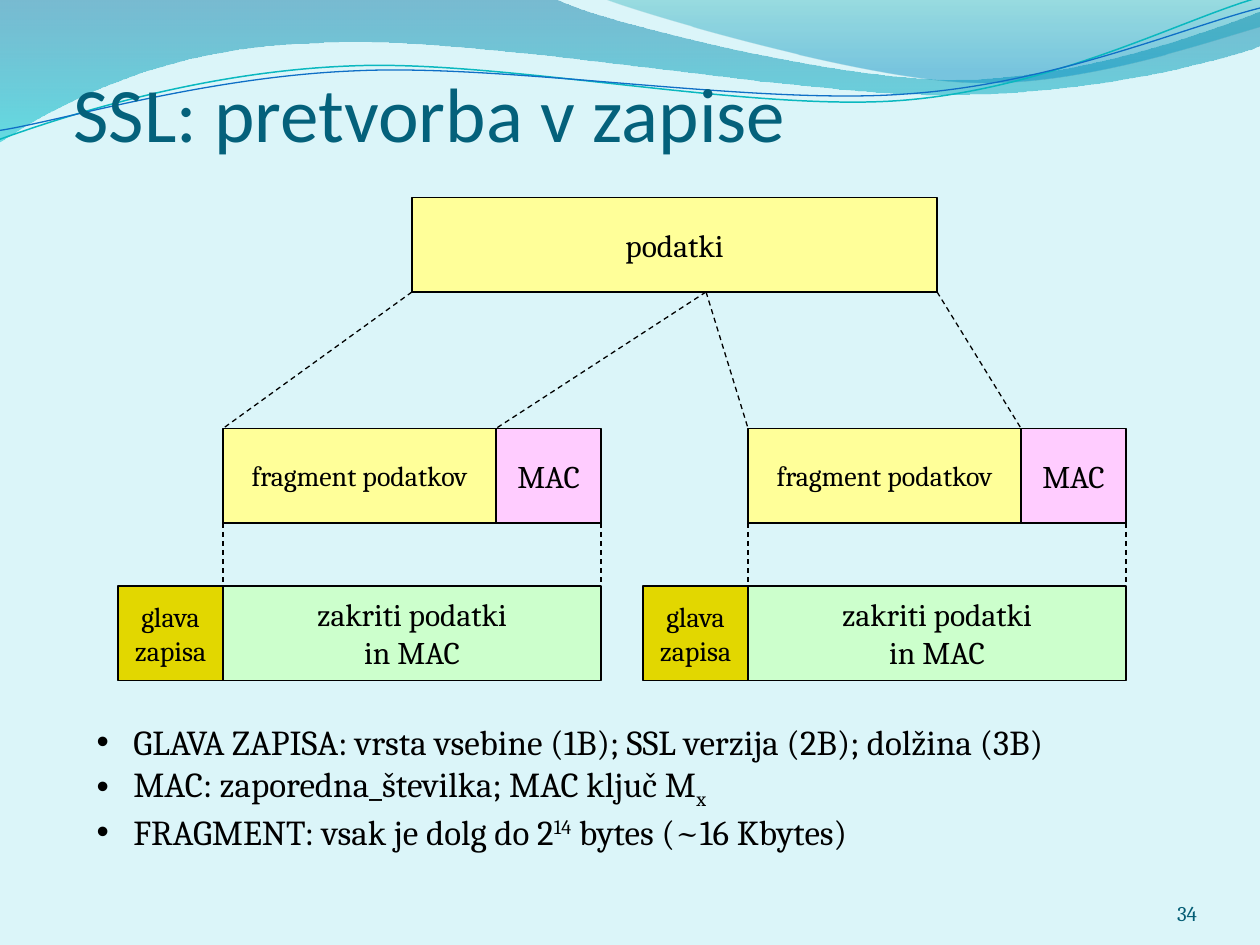
from lxml.etree import SubElement
from pptx import Presentation
from pptx.dml.color import RGBColor
from pptx.enum.dml import MSO_LINE
from pptx.enum.shapes import MSO_CONNECTOR as Link, MSO_SHAPE as Kind
from pptx.enum.text import MSO_ANCHOR as Anchor, MSO_AUTO_SIZE as Fit, PP_ALIGN as Align
from pptx.oxml.ns import qn
from pptx.util import Cm, Pt

BLACK = RGBColor(0x00, 0x00, 0x00)
SKY = RGBColor(0xDB, 0xF5, 0xF9)
TITLE = RGBColor(0x04, 0x61, 0x7B)
NUMBER = RGBColor(0x04, 0x5D, 0x75)
YELLOW = RGBColor(0xFF, 0xFF, 0x99)
PINK = RGBColor(0xFF, 0xCC, 0xFF)
GREEN = RGBColor(0xCC, 0xFF, 0xCC)
GOLD = RGBColor(0xE2, 0xD7, 0x00)
BLUE = RGBColor(0x0F, 0x6F, 0xC6)
TEAL = RGBColor(0x0A, 0xB8, 0xBF)
DEEP = RGBColor(0x00, 0x74, 0xA1)
AQUA = RGBColor(0x00, 0xC6, 0xCF)
JADE = RGBColor(0x00, 0xA1, 0xA9)
OCEAN = RGBColor(0x00, 0x8B, 0xBF)

WIDE, HIGH = 25.4, 19.05
# The diagram sits on a grid of twelfths of an inch
GRID = 2.54 / 12
ROW, CELL, PART = 9 * GRID, 10 * GRID, 26 * GRID  # row height, small cell, fragment
BODY = PART + CELL
STEP = 50 * GRID                                  # from one record to the next

# Waves in tenths of the band width: a start, then lines (2) and curves (6)
FILLS = [
    ([(0, 0), (4.4, -0.01), (4.76, 0.17, 6.64, 0.63, 7.58, 0.63),
      (8.53, 0.63, 9.58, 0.26, 10, 0.09), (10.01, 0.36),
      (9.83, 0.44, 8.7, 0.76, 7.46, 0.75), (6.22, 0.75, 3.82, 0.28, 2.57, 0.34),
      (1.29, 0.36, 0.46, 0.83, -0.01, 1.13), (0, 0)],
     [(0, DEEP, 45), (1, AQUA, 55)]),
    ([(4.79, -0.01), (5.09, 0.11, 6.82, 0.62, 7.69, 0.65),
      (8.56, 0.69, 9.61, 0.32, 10, 0.21), (10, 0), (4.79, -0.01)],
     [(0, JADE, 30), (0.8, OCEAN, 45)]),
]
TILT = 357.3
LINES = [
    ([(-0.02, 0.87), (0.47, 0.72, 1.58, 0.41, 2.78, 0.42),
      (3.96, 0.42, 5.91, 0.93, 7.12, 0.9), (8.32, 0.87, 9.4, 0.36, 10, 0.22)],
     TEAL, 0.85),
    ([(-0.02, 0.8), (0.46, 0.75, 1.64, 0.45, 2.83, 0.46),
      (4.03, 0.46, 5.96, 0.88, 7.16, 0.85), (8.35, 0.83, 9.42, 0.42, 10.02, 0.3)],
     BLUE, 0.75),
]
# Each bullet is a list of (text, baseline in percent)
NOTES = [
    [("GLAVA ZAPISA: vrsta vsebine (1B); SSL verzija (2B); dolžina (3B)", 0)],
    [("MAC: zaporedna_številka; MAC ključ M", 0), ("x", -25)],
    [("FRAGMENT: vsak je dolg do 2", 0), ("14", 30), (" bytes (~16 Kbytes)", 0)],
]


def style(para, size, color=BLACK, face="Cambria", align=Align.LEFT):
    para.alignment = align
    for run in para.runs:
        run.font.size, run.font.name = Pt(size), face
        run.font.color.rgb = color


def add_wave(slide, left, top, width, steps, close):
    dots = [(Cm(left + x * width / 10), Cm(top + y * width / 10))
            for step in steps for x, y in zip(step[::2], step[1::2])]
    pen = slide.shapes.build_freeform(*dots[0], scale=1.0)
    pen.add_line_segments(dots[1:], close=close)
    wave = pen.convert_to_shape()
    wave.shadow.inherit = False
    # Join each three points of a curve step into one Bezier segment
    lines = iter(wave._element.xpath(".//a:lnTo"))
    for step in steps[1:]:
        first = next(lines)
        if len(step) == 6:
            first.tag = qn("a:cubicBezTo")
            for line in (next(lines), next(lines)):
                first.append(line[0])
                line.getparent().remove(line)
    return wave


def add_band(slide, left, top, width):
    for steps, stops in FILLS:
        wave = add_wave(slide, left, top, width, steps, True)
        wave.line.fill.background()
        wave.fill.gradient()
        wave.fill.gradient_angle = 270
        for stop, (place, color, _) in zip(wave.fill.gradient_stops, stops):
            stop.position, stop.color.rgb = place, color
        tints = wave._element.xpath(".//a:gs/a:srgbClr")
        for tint, (_, _, alpha) in zip(tints, stops):
            SubElement(tint, qn("a:alpha")).set("val", str(alpha * 1000))
    for steps, color, weight in LINES:
        wave = add_wave(slide, left, top, width, steps, False)
        wave.rotation = TILT
        wave.fill.background()
        wave.line.color.rgb, wave.line.width = color, Pt(weight)


def add_box(slide, left, top, width, text, fill, size=18):
    box = slide.shapes.add_shape(Kind.RECTANGLE, Cm(left), Cm(top),
                                 Cm(width), Cm(ROW))
    box.shadow.inherit = False
    box.fill.solid()
    box.fill.fore_color.rgb = fill
    box.line.color.rgb, box.line.width = BLACK, Pt(0.75)
    frame = box.text_frame
    frame.text, frame.word_wrap = text, False
    frame.vertical_anchor = Anchor.MIDDLE
    for para in frame.paragraphs:
        style(para, size, align=Align.CENTER)


def add_dash(slide, x1, y1, x2, y2):
    dash = slide.shapes.add_connector(Link.STRAIGHT, Cm(x1), Cm(y1), Cm(x2), Cm(y2))
    dash.line.color.rgb, dash.line.width = BLACK, Pt(0.75)
    dash.line.dash_style = MSO_LINE.DASH
    SubElement(dash._element.spPr, qn("a:effectLst"))


def add_record(slide, left, top):
    """A fragment with its MAC, above the encrypted record."""
    main, low = left + CELL, top + 15 * GRID
    add_box(slide, main, top, PART, "fragment podatkov", YELLOW, 16)
    add_box(slide, main + PART, top, CELL, "MAC", PINK)
    add_box(slide, main, low, BODY, "zakriti podatki\nin MAC", GREEN)
    add_box(slide, left, low, CELL, "glava\nzapisa", GOLD, 16)
    for x in (main, main + BODY):
        add_dash(slide, x, top + ROW, x, low)


def add_diagram(slide, left, top):
    data, split, low = left + 28 * GRID, left + 56 * GRID, top + 22 * GRID
    add_box(slide, data, top, STEP, "podatki", YELLOW)
    for i, (start, end) in enumerate([(data, split), (split, data + STEP)]):
        spot = left + i * STEP
        add_record(slide, spot, low)
        add_dash(slide, start, top + ROW, spot + CELL, low)
        add_dash(slide, end, top + ROW, spot + CELL + PART, low)


def add_text(slide, left, top, width, height):
    box = slide.shapes.add_textbox(Cm(left), Cm(top), Cm(width), Cm(height))
    box.text_frame.word_wrap = True
    return box.text_frame


def add_label(slide, box, text, size, color, face, align, inset=0):
    frame = add_text(slide, *box)
    frame.text, frame.vertical_anchor = text, Anchor.BOTTOM
    frame.margin_left = frame.margin_right = frame.margin_bottom = 0
    frame.margin_top = Cm(inset)
    style(frame.paragraphs[0], size, color, face, align)


def add_notes(slide, left, top, width, height):
    frame = add_text(slide, left, top, width, height)
    frame.word_wrap, frame.auto_size = False, Fit.SHAPE_TO_FIT_TEXT
    for i, parts in enumerate(NOTES):
        para = frame.add_paragraph() if i else frame.paragraphs[0]
        for text, base in parts:
            run = para.add_run()
            run.text = text
            if base:
                run._r.get_or_add_rPr().set("baseline", str(base * 1000))
        style(para, 20)
        props = para._p.get_or_add_pPr()
        props.set("marL", str(Cm(0.74)))
        props.set("indent", str(-Cm(0.74)))
        SubElement(props, qn("a:buFont")).set("typeface", "Arial")
        SubElement(props, qn("a:buChar")).set("char", "•")


def main():
    deck = Presentation()
    deck.slide_width, deck.slide_height = Cm(WIDE), Cm(HIGH)
    slide = deck.slides.add_slide(deck.slide_layouts[6])
    back = slide.background.fill
    back.solid()
    back.fore_color.rgb = SKY

    add_band(slide, 0, 0, WIDE)
    add_label(slide, (1.48, 0, 21.6, 3.18), "SSL: pretvorba v zapise",
              44, TITLE, "Calibri", Align.LEFT, 0.13)
    add_diagram(slide, 2.38, 3.98)
    add_notes(slide, 1.7, 14.4, 20.85, 2.82)
    add_label(slide, (22.01, 17.66, 2.12, 1.01), "34",
              12, NUMBER, "Cambria", Align.RIGHT)
    deck.save("out.pptx")


if __name__ == "__main__":
    main()
